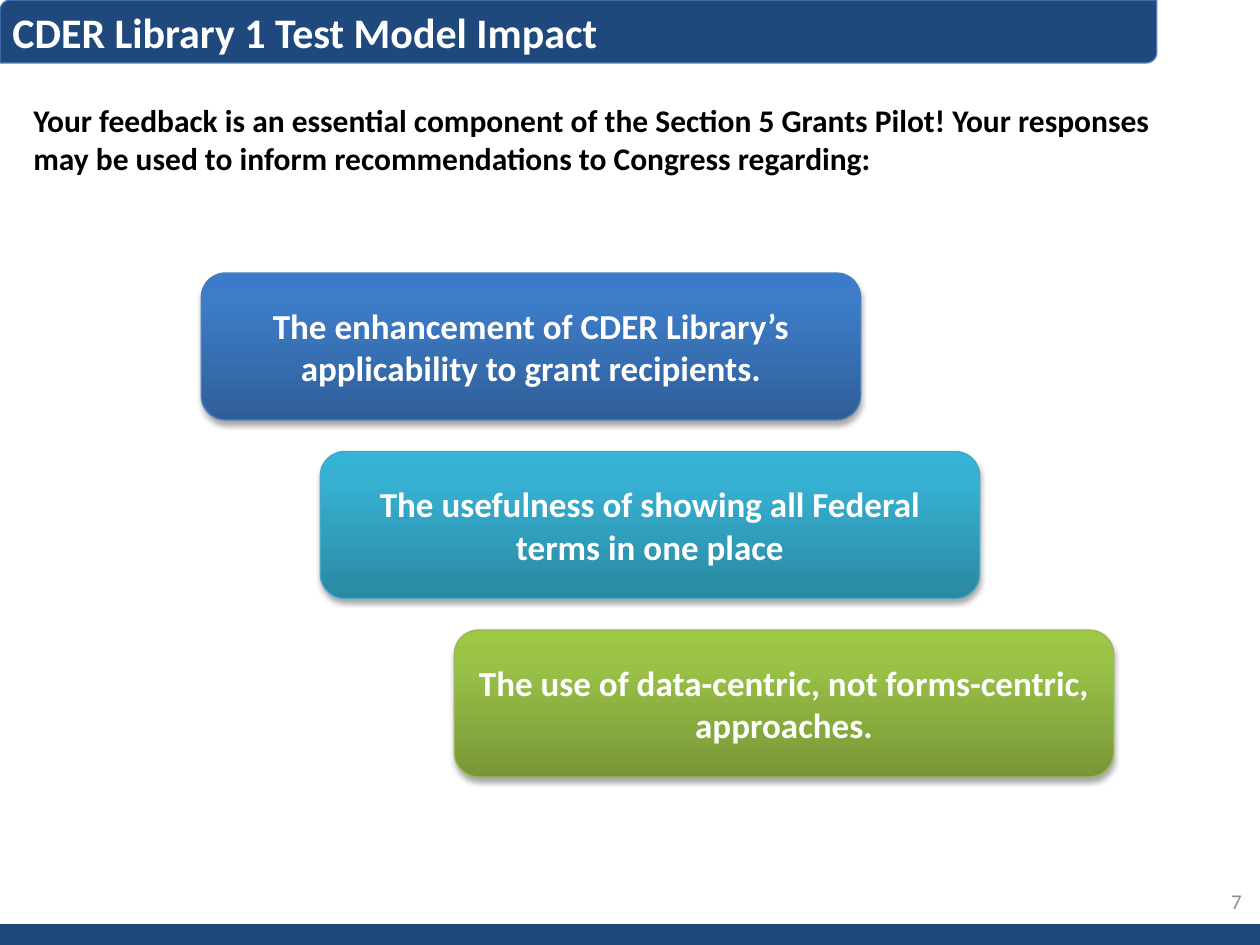
from copy import deepcopy
from dataclasses import dataclass

from lxml import etree
from pptx import Presentation
from pptx.dml.color import RGBColor
from pptx.enum.shapes import MSO_SHAPE
from pptx.enum.text import MSO_ANCHOR, PP_ALIGN
from pptx.oxml.ns import qn
from pptx.shapes.autoshape import Shape
from pptx.slide import Slide
from pptx.util import Pt

RECTANGLE = MSO_SHAPE.RECTANGLE
ROUNDED = MSO_SHAPE.ROUNDED_RECTANGLE
DIAGONAL_ROUNDED = MSO_SHAPE.ROUND_2_DIAG_RECTANGLE
TOP, MIDDLE = MSO_ANCHOR.TOP, MSO_ANCHOR.MIDDLE
LEFT, CENTER, RIGHT = PP_ALIGN.LEFT, PP_ALIGN.CENTER, PP_ALIGN.RIGHT

FONT = "Calibri"
NAVY = RGBColor(0x1F, 0x49, 0x7D)
EDGE_BLUE = RGBColor(0x4B, 0x7E, 0xBC)
EDGE_TEAL = RGBColor(0x46, 0xAA, 0xC5)
EDGE_GREEN = RGBColor(0x98, 0xB9, 0x55)
BLUES = (RGBColor(0x2F, 0x5F, 0x99), RGBColor(0x3D, 0x7C, 0xC7), RGBColor(0x3A, 0x7C, 0xCB))
TEALS = (RGBColor(0x2A, 0x88, 0xA2), RGBColor(0x37, 0xB1, 0xD2), RGBColor(0x34, 0xB4, 0xD6))
GREENS = (RGBColor(0x77, 0x97, 0x37), RGBColor(0x9B, 0xC3, 0x48), RGBColor(0x9D, 0xC7, 0x46))
WHITE = RGBColor(0xFF, 0xFF, 0xFF)
BLACK = RGBColor(0, 0, 0)
GRAY = RGBColor(0x8C, 0x8C, 0x8C)

PAGE_WIDTH, PAGE_HEIGHT = 720, 540
FOOTER_HEIGHT = 12
CARD_WIDTH, CARD_HEIGHT = 376.8, 84
CARD_TOP, CARD_STEP = 156, 102
STOP_POSITIONS = (0, 0.8, 1)


@dataclass(frozen=True)
class Area:
    left: float
    top: float
    width: float
    height: float

    def in_points(self) -> tuple[Pt, Pt, Pt, Pt]:
        return Pt(self.left), Pt(self.top), Pt(self.width), Pt(self.height)


@dataclass(frozen=True)
class TextStyle:
    size: float
    color: RGBColor
    bold: bool = True
    align: PP_ALIGN = LEFT
    anchor: MSO_ANCHOR = TOP


@dataclass(frozen=True)
class Card:
    left: float
    text: str
    gradient: tuple[RGBColor, RGBColor, RGBColor]
    edge: RGBColor


TITLE_STYLE = TextStyle(24, WHITE)
INTRO_STYLE = TextStyle(18, BLACK)
NUMBER_STYLE = TextStyle(12, GRAY, bold=False, align=RIGHT, anchor=MIDDLE)
CARD_STYLE = TextStyle(20, WHITE, align=CENTER, anchor=MIDDLE)

CARDS = (
    Card(115, "The enhancement of CDER Library’s applicability to grant recipients.",
         BLUES, EDGE_BLUE),
    Card(183, "The usefulness of showing all Federal terms in one place", TEALS, EDGE_TEAL),
    Card(259.6, "The use of data-centric, not forms-centric, approaches.", GREENS, EDGE_GREEN),
)


def write_text(shape: Shape, text: str, style: TextStyle) -> None:
    frame = shape.text_frame
    frame.word_wrap = True
    frame.vertical_anchor = style.anchor
    frame.text = text
    paragraph = frame.paragraphs[0]
    paragraph.alignment = style.align
    font = paragraph.runs[0].font
    font.name, font.size, font.bold = FONT, Pt(style.size), style.bold
    font.color.rgb = style.color


def add_text(page: Slide, area: Area, text: str, style: TextStyle) -> None:
    write_text(page.shapes.add_textbox(*area.in_points()), text, style)


def add_bar(page: Slide, kind: MSO_SHAPE, area: Area, edge: RGBColor | None = None) -> None:
    bar = page.shapes.add_shape(kind, *area.in_points())
    bar.shadow.inherit = False
    bar.fill.solid()
    bar.fill.fore_color.rgb = NAVY
    set_edge(bar, edge)


def set_edge(shape: Shape, color: RGBColor | None) -> None:
    if color is None:
        shape.line.fill.background()
    else:
        shape.line.color.rgb = color
        shape.line.width = Pt(0.75)


def fill_gradient(shape: Shape, colors: tuple[RGBColor, ...]) -> None:
    """Fill from the bottom up, with one stop per color."""
    shape.fill.gradient()
    shape.fill.gradient_angle = 90
    stop_list = shape._element.spPr.find(qn("a:gradFill")).find(qn("a:gsLst"))
    stop_list.append(deepcopy(stop_list[0]))
    for stop, position, color in zip(shape.fill.gradient_stops, STOP_POSITIONS, colors):
        stop.position = position
        stop.color.rgb = color


def add_shadow(shape: Shape) -> None:
    """Cast a soft, 35 % black shadow straight down."""
    shape.shadow.inherit = False
    effects = shape._element.spPr.find(qn("a:effectLst"))
    shadow = etree.SubElement(effects, qn("a:outerShdw"), blurRad=str(Pt(3.1)),
                              dist=str(Pt(1.8)), dir="5400000", rotWithShape="0")
    color = etree.SubElement(shadow, qn("a:srgbClr"), val=str(BLACK))
    etree.SubElement(color, qn("a:alpha"), val="35000")


def add_card(page: Slide, card: Card, top: float) -> None:
    area = Area(card.left, top, CARD_WIDTH, CARD_HEIGHT)
    shape = page.shapes.add_shape(ROUNDED, *area.in_points())
    fill_gradient(shape, card.gradient)
    set_edge(shape, card.edge)
    add_shadow(shape)
    write_text(shape, card.text, CARD_STYLE)


def main() -> None:
    deck = Presentation()
    deck.slide_width, deck.slide_height = Pt(PAGE_WIDTH), Pt(PAGE_HEIGHT)
    page = deck.slides.add_slide(deck.slide_layouts[6])

    add_bar(page, RECTANGLE,
            Area(0, PAGE_HEIGHT - FOOTER_HEIGHT, PAGE_WIDTH, FOOTER_HEIGHT))
    add_bar(page, DIAGONAL_ROUNDED, Area(0, 0, 661, 36), EDGE_BLUE)
    add_text(page, Area(548.6, 500.4, 168, 28.8), "7", NUMBER_STYLE)
    add_text(page, Area(0, 0, 624, 36), "CDER Library 1 Test Model Impact", TITLE_STYLE)
    add_text(page, Area(12, 54, 662, 51),
             "Your feedback is an essential component of the Section 5 Grants Pilot! "
             "Your responses may be used to inform recommendations to Congress regarding:",
             INTRO_STYLE)
    for index, card in enumerate(CARDS):
        add_card(page, card, CARD_TOP + index * CARD_STEP)

    deck.save("out.pptx")


if __name__ == "__main__":
    main()
